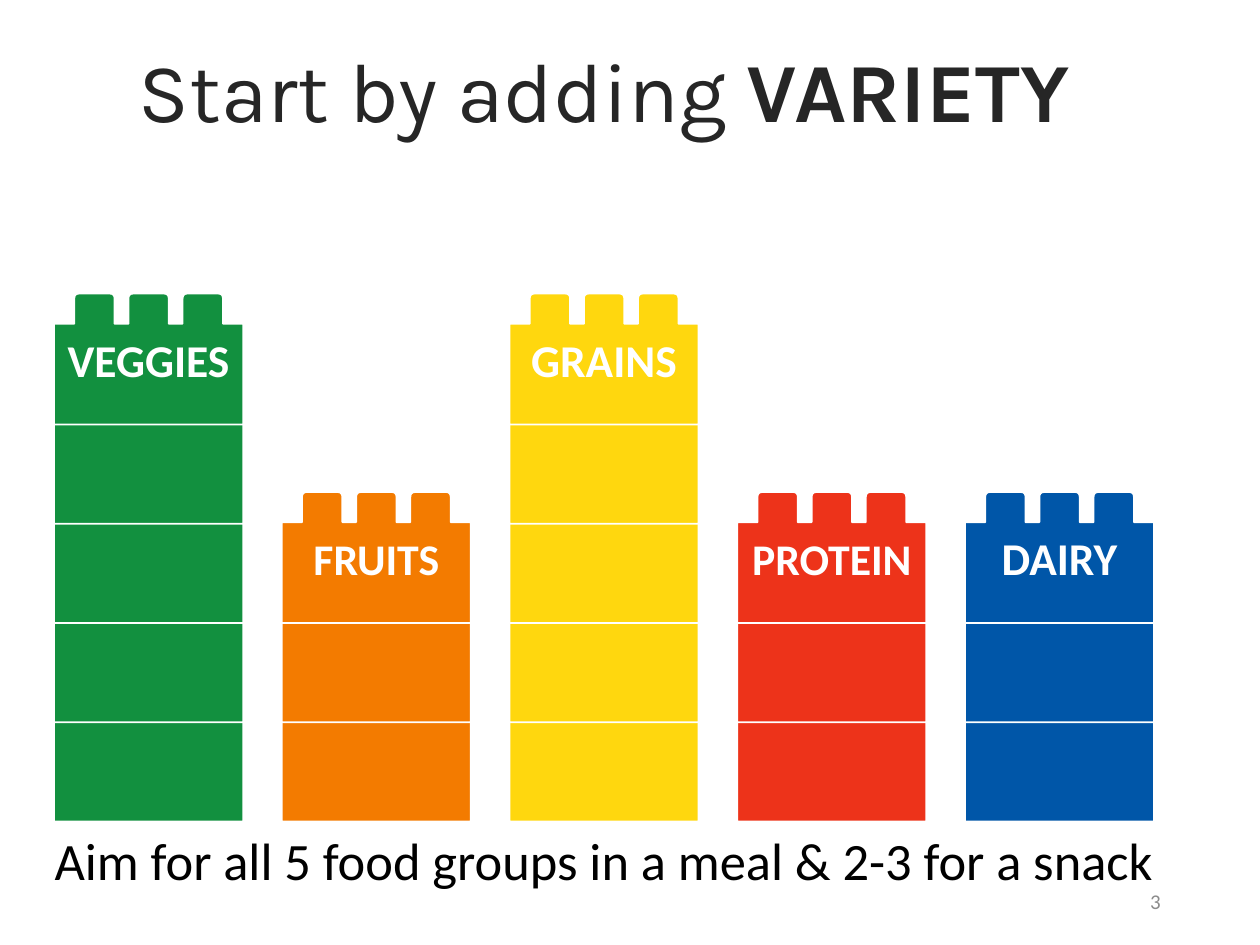
import lxml.etree
import pptx
import pptx.dml.color
import pptx.enum.text
import pptx.oxml.ns
import pptx.util

Inches, Pt = pptx.util.Inches, pptx.util.Pt
PP_ALIGN = pptx.enum.text.PP_ALIGN
MSO_ANCHOR = pptx.enum.text.MSO_ANCHOR
qn = pptx.oxml.ns.qn

COLORS = {
    "green": "12903F", "orange": "F37B00", "yellow": "FFD70E",
    "red": "ED331A", "blue": "0056A8",
    "white": "FFFFFF", "black": "000000", "title": "262626", "number": "8C8C8C",
}
TITLE = [("Start by adding ", False), ("VARIETY", True)]
CAPTION = "Aim for all 5 food groups in a meal & 2-3 for a snack"
SLIDE_NUMBER = "3"
# label, colour, number of bricks, label size
TOWERS = [
    ("VEGGIES", "green", 5, 26),
    ("FRUITS", "orange", 3, 25),
    ("GRAINS", "yellow", 5, 26),
    ("PROTEIN", "red", 3, 25),
    ("DAIRY", "blue", 3, 26),
]

FIRST_LEFT, LAST_LEFT = 0.43, 7.66
BOTTOM_TOP, HIGHEST_TOP = 5.48, 2.33
BRICK_W, BRICK_H = 1.5, 1.04
STUDS, STUD_LEFT, STUD_W, STUD_H, STUD_PITCH = 3, 0.16, 0.32, 0.24, 0.43
RADIUS = 0.04


def rgb(name):
    return pptx.dml.color.RGBColor.from_string(COLORS[name])


def style(p, size, color, font="Calibri", bold=None, align=PP_ALIGN.CENTER):
    p.alignment = align
    p.font.name, p.font.size, p.font.bold = font, Pt(size), bold
    p.font.color.rgb = rgb(color)


def brick_outline(left, top):
    """Corner points of a brick; each stud has bevelled top corners."""
    shoulder, right, bottom = top + STUD_H, left + BRICK_W, top + BRICK_H
    points = [(left, shoulder)]
    for i in range(STUDS):
        x1 = left + STUD_LEFT + i * STUD_PITCH
        x2 = x1 + STUD_W
        points += [(x1, shoulder), (x1, top + RADIUS), (x1 + RADIUS, top),
                   (x2 - RADIUS, top), (x2, top + RADIUS), (x2, shoulder)]
    return points + [(right, shoulder), (right, bottom), (left, bottom)]


def round_bevels(sp):
    """Turn every slanted segment of the outline into a curve."""
    x0 = y0 = None
    for pt in sp._element.xpath(".//a:moveTo/a:pt | .//a:lnTo/a:pt"):
        x, y = int(pt.get("x")), int(pt.get("y"))
        if x0 is not None and x != x0 and y != y0:
            line = pt.getparent()
            curve = lxml.etree.Element(qn("a:quadBezTo"))
            lxml.etree.SubElement(curve, qn("a:pt"), x=str(max(x, x0) if y > y0 else x0),
                                  y=str(min(y, y0)))
            curve.append(pt)
            line.getparent().replace(line, curve)
        x0, y0 = x, y


def add_brick(slide, left, top, color):
    points = [(Inches(x), Inches(y)) for x, y in brick_outline(left, top)]
    builder = slide.shapes.build_freeform(*points[0])
    builder.add_line_segments(points[1:], close=True)
    sp = builder.convert_to_shape()
    round_bevels(sp)
    sp.shadow.inherit = False
    sp.fill.solid()
    sp.fill.fore_color.rgb = rgb(color)
    sp.line.color.rgb = rgb("white")
    sp.line.width = Pt(1)
    return sp


def add_label(brick, text, size):
    tf = brick.text_frame
    tf.margin_left = tf.margin_right = 0
    tf.vertical_anchor = MSO_ANCHOR.MIDDLE
    p = tf.paragraphs[0]
    p.text = text
    style(p, size, "white", bold=True)


def add_text(slide, box, text, anchor, **look):
    tf = slide.shapes.add_textbox(*map(Inches, box)).text_frame
    tf.word_wrap = True
    tf.vertical_anchor = anchor
    p = tf.paragraphs[0]
    p.text = text
    style(p, **look)


def add_title(slide):
    sp = slide.shapes.title
    sp.left, sp.top, sp.width, sp.height = map(Inches, (0.84, 0.03, 7.91, 1.45))
    tf = sp.text_frame
    tf.auto_size = pptx.enum.text.MSO_AUTO_SIZE.NONE
    tf.vertical_anchor = MSO_ANCHOR.MIDDLE
    p = tf.paragraphs[0]
    p.line_spacing = 0.9
    style(p, 48, "title", font="Karla")
    for text, bold in TITLE:
        r = p.add_run()
        r.text = text
        if bold:
            r.font.bold = True


def add_towers(slide):
    gap = (LAST_LEFT - FIRST_LEFT) / (len(TOWERS) - 1)
    rise = (BOTTOM_TOP - HIGHEST_TOP) / (max(t[2] for t in TOWERS) - 1)
    for col, (label, color, count, size) in enumerate(TOWERS):
        # Each higher brick covers the studs of the one below.
        for level in range(count):
            brick = add_brick(slide, FIRST_LEFT + col * gap,
                              BOTTOM_TOP - level * rise, color)
        add_label(brick, label, size)


def main():
    prs = pptx.Presentation()
    prs.slide_width, prs.slide_height = Inches(10), Inches(7.5)
    slide = prs.slides.add_slide(prs.slide_layouts[5])
    add_title(slide)
    add_text(slide, (7.06, 6.95, 2.25, 0.4), SLIDE_NUMBER, MSO_ANCHOR.MIDDLE,
             size=12, color="number", align=PP_ALIGN.RIGHT)
    add_towers(slide)
    add_text(slide, (0.14, 6.52, 9.31, 0.61), CAPTION, MSO_ANCHOR.TOP,
             size=30, color="black")
    prs.save("out.pptx")


if __name__ == "__main__":
    main()
